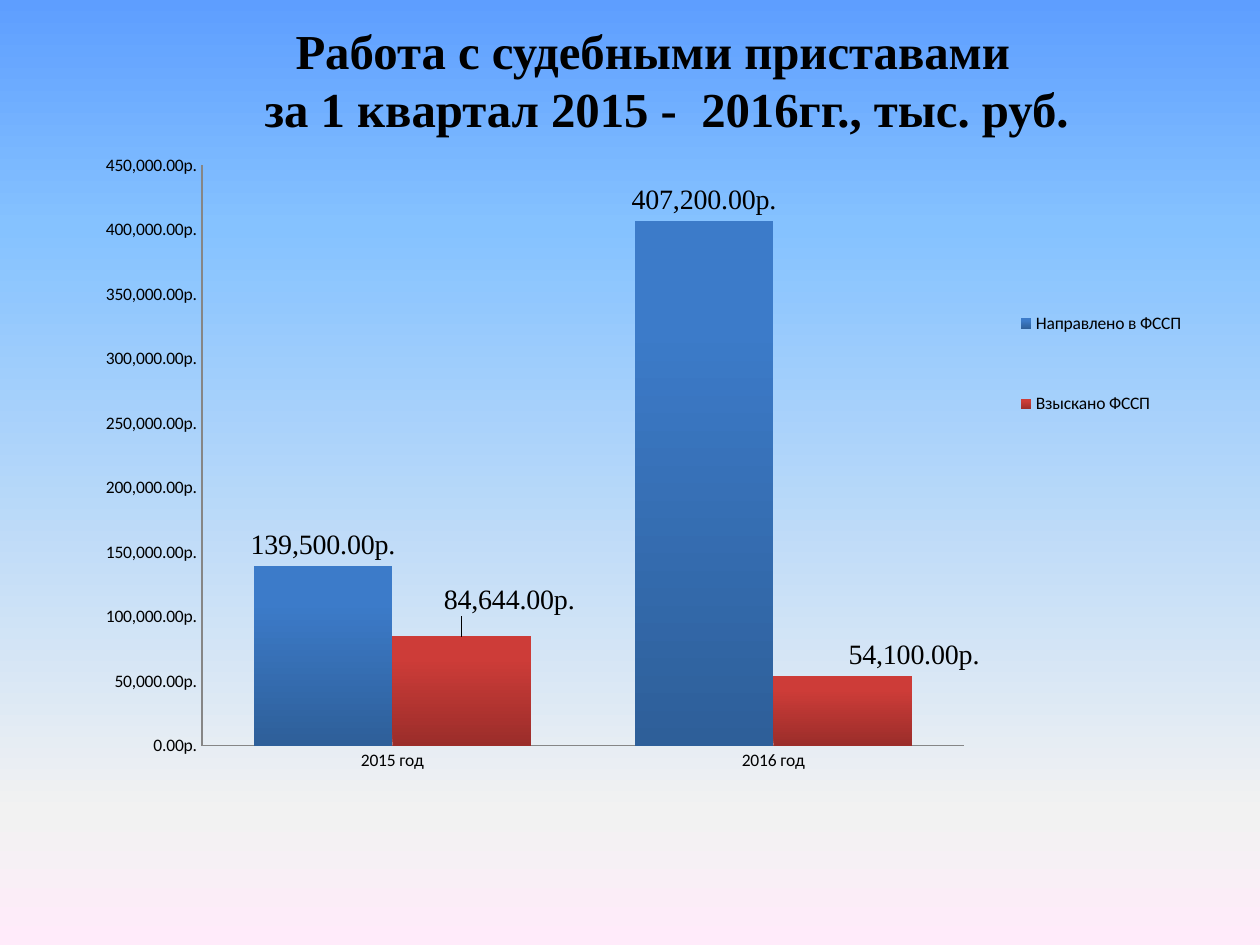
"""Build a slide with a column chart of sums sent to and collected by bailiffs."""
from lxml.etree import SubElement as Sub
from pptx import Presentation
from pptx.chart.data import CategoryChartData as Data
from pptx.dml.color import RGBColor as Rgb
from pptx.enum.chart import XL_CHART_TYPE as Type
from pptx.enum.chart import XL_LABEL_POSITION as Spot
from pptx.enum.chart import XL_LEGEND_POSITION as Side
from pptx.enum.chart import XL_TICK_MARK as Tick
from pptx.enum.text import MSO_ANCHOR as Anchor
from pptx.enum.text import PP_ALIGN as Align
from pptx.oxml.ns import qn
from pptx.util import Cm, Pt

HEX = {
    "text": "000000", "axis": "868686",
    "sky": "5E9EFF", "light": "85C2FF", "pale": "F2F2F2", "pink": "FFEBFA",
    "navy": "2E5F99", "blue": "3C7BC9", "wine": "9B2D2A", "red": "CD3C38",
}
SERIF, SANS = "Times New Roman", "Calibri"
MONEY = '#,##0.00"р."'
TITLE = [("Работа с судебными приставами", 0),
         ("за 1 квартал 2015 -  2016гг., тыс. руб.", 0.56)]
YEARS = ["2015 год", "2016 год"]
SUMS = [
    {"name": "Направлено в ФССП", "vals": [139500, 407200],
     "fade": [(0, "navy"), (80, "blue"), (100, "blue")], "shift": []},
    {"name": "Взыскано ФССП", "vals": [84644, 54100],
     "fade": [(0, "wine"), (80, "red"), (100, "red")],
     "shift": [(0.04, -0.02), (0.06, 0)]},
]
SKY = [(0, "sky"), (24, "light"), (86, "pale"), (100, "pink")]
PLOT = (0.14, 0.04, 0.64, 0.76)
KEY = (0.81, 0.155, 0.17, 0.29)


def color(name):
    return Rgb.from_string(HEX[name])


def style(font, face, size, bold=False):
    font.name, font.size, font.bold = face, Pt(size), bold
    font.color.rgb = color("text")


def fade(fill, root, stops, angle):
    fill.gradient()
    fill.gradient_angle = angle
    steps = root.find(".//" + qn("a:gsLst"))
    for old in list(steps):
        steps.remove(old)
    for pos, name in stops:
        step = Sub(steps, qn("a:gs"), pos=str(pos * 1000))
        Sub(step, qn("a:srgbClr"), val=HEX[name])


def place(root, index, box, inner=False):
    for old in root.findall(qn("c:layout")):
        root.remove(old)
    frame = Sub(root, qn("c:layout"))
    root.insert(index, frame)
    manual = Sub(frame, qn("c:manualLayout"))
    if inner:
        Sub(manual, qn("c:layoutTarget"), val="inner")
    if len(box) == 4:
        for mode in ("xMode", "yMode"):
            Sub(manual, qn("c:" + mode), val="edge")
    for tag, part in zip("xywh", box):
        Sub(manual, qn("c:" + tag), val=str(part))


def add_title(slide):
    box = slide.shapes.add_textbox(Cm(1.73), Cm(0.2), Cm(22.86), Cm(2.8))
    frame = box.text_frame
    frame.word_wrap = True
    frame.vertical_anchor = Anchor.MIDDLE
    for row, (text, inset) in enumerate(TITLE):
        para = frame.add_paragraph() if row else frame.paragraphs[0]
        para.alignment = Align.CENTER
        para.line_spacing = Pt(33)
        para._p.get_or_add_pPr().set("marL", str(Cm(inset)))
        run = para.add_run()
        run.text = text
        style(run.font, SERIF, 27.9, True)


def add_sums(slide):
    data = Data(number_format=MONEY)
    data.categories = YEARS
    for item in SUMS:
        data.add_series(item["name"], item["vals"])
    chart = slide.shapes.add_chart(
        Type.COLUMN_CLUSTERED, Cm(0.71), Cm(2.72), Cm(24), Cm(15.39), data).chart
    style(chart.font, SANS, 10)
    chart.has_title = False
    chart.has_legend = True
    chart.legend.position = Side.BOTTOM
    chart.legend.include_in_layout = False
    place(chart.legend._element, 1, KEY)

    for axis in (chart.category_axis, chart.value_axis):
        axis.has_major_gridlines = False
        axis.major_tick_mark = axis.minor_tick_mark = Tick.NONE
        axis.format.line.color.rgb = color("axis")
        axis.format.line.width = Pt(0.75)
    scale = chart.value_axis
    scale.minimum_scale, scale.maximum_scale, scale.major_unit = 0, 450000, 50000
    scale.tick_labels.number_format = MONEY
    scale.tick_labels.number_format_is_linked = False

    plot = chart.plots[0]
    plot.gap_width, plot.overlap, plot.vary_by_categories = 75, 0, False
    place(chart._chartSpace.find(".//" + qn("c:plotArea")), 0, PLOT, True)
    for bars, item in zip(plot.series, SUMS):
        fade(bars.format.fill, bars._element, item["fade"], 90)
        tags = bars.data_labels
        tags.show_value = True
        tags.number_format = MONEY
        tags.number_format_is_linked = False
        tags.position = Spot.OUTSIDE_END
        style(tags.font, SERIF, 16)
        for spot, shift in enumerate(item["shift"]):
            tag = bars.points[spot].data_label
            tag.position = Spot.OUTSIDE_END
            style(tag.font, SERIF, 16)
            place(tags._element.findall(qn("c:dLbl"))[spot], 1, shift)


def main():
    deck = Presentation()
    deck.slide_width, deck.slide_height = Cm(25.4), Cm(19.05)
    slide = deck.slides.add_slide(deck.slide_layouts[6])
    fade(slide.background.fill, slide._element, SKY, 270)
    add_title(slide)
    add_sums(slide)
    deck.save("out.pptx")


if __name__ == "__main__":
    main()
